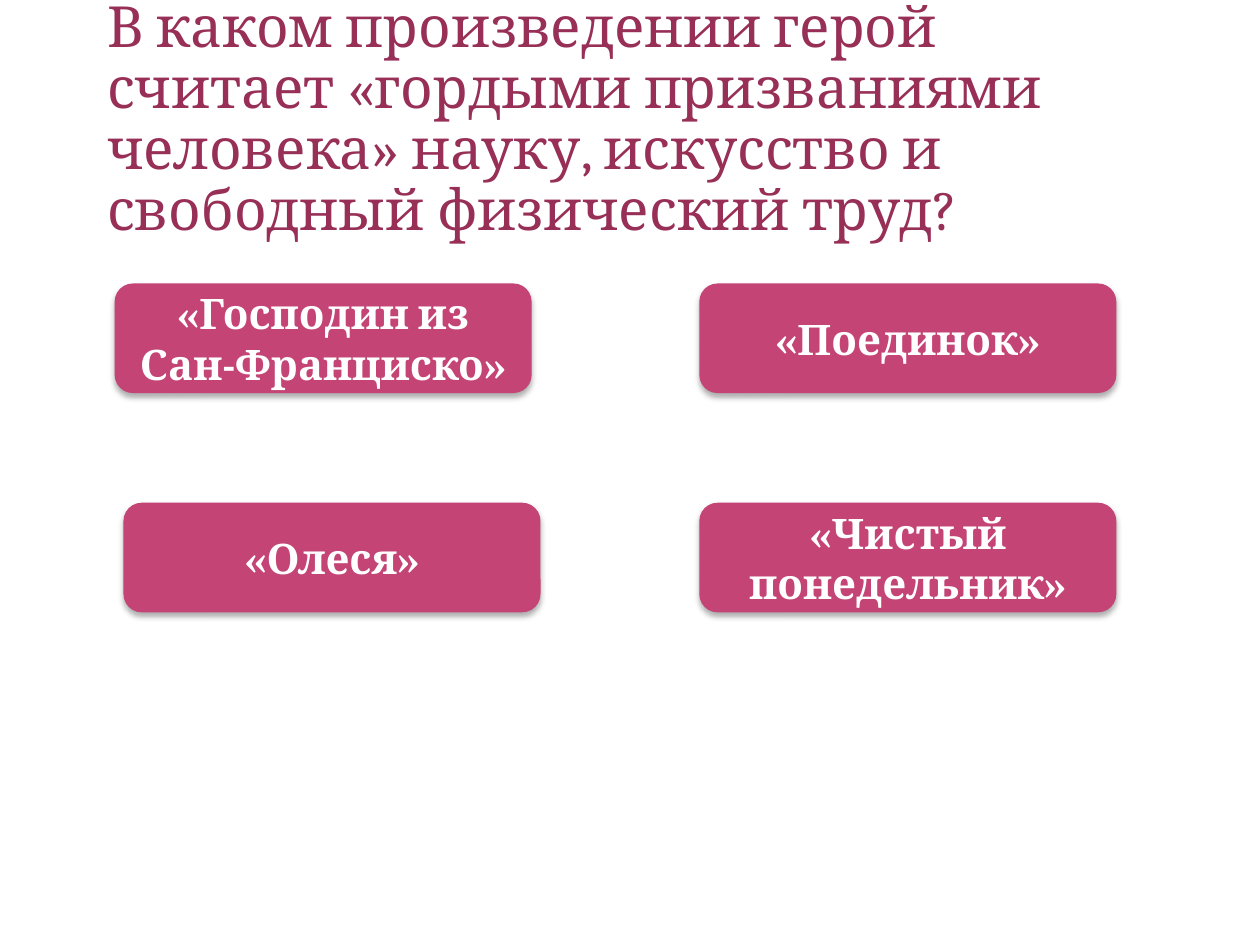
from pptx import Presentation
from pptx import util as u
from pptx.dml.color import RGBColor
from pptx.enum import shapes, text
from pptx.oxml import parse_xml
from pptx.oxml.ns import nsdecls

WIDTH, HEIGHT = 10, 7.5
QUESTION = ("В каком произведении герой считает «гордыми призваниями человека» "
            "науку, искусство и свободный физический труд?")
ROWS = (2.25, 3.99)
ANSWERS = (
    ("«Господин из Сан-Франциско»", 0.91, ROWS[0]),
    ("«Олеся»", 0.98, ROWS[1]),
    ("«Поединок»", 5.55, ROWS[0]),
    ("«Чистый понедельник»", 5.55, ROWS[1]),
)


def color(value):
    return RGBColor.from_string(value)


def write(frame, words, size, ink, bold=False, align=text.PP_ALIGN.LEFT,
          anchor=text.MSO_ANCHOR.MIDDLE, spacing=1.0, font="Cambria"):
    frame.word_wrap = True
    frame.auto_size = text.MSO_AUTO_SIZE.NONE
    frame.vertical_anchor = anchor
    para = frame.paragraphs[0]
    para.alignment = align
    para.line_spacing = spacing
    span = para.add_run()
    span.text = words
    span.font.name = font
    span.font.size = u.Pt(size)
    span.font.bold = bold
    span.font.color.rgb = color(ink)


class QuizSlide:
    """Builds a quiz question with answer buttons in one style."""

    accent, title_ink, button_ink = "C44475", "972F57", "FFFFFF"
    button_size = (3.31, 0.87)

    def __init__(self, deck):
        self.page = deck.slides.add_slide(deck.slide_layouts[5])

    def question(self, words, left, top, width, height):
        box = self.page.shapes.title
        box.left, box.top = u.Inches(left), u.Inches(top)
        box.width, box.height = u.Inches(width), u.Inches(height)
        write(box.text_frame, words, 32.4, self.title_ink,
              anchor=text.MSO_ANCHOR.BOTTOM, spacing=0.9)

    def answer(self, words, left, top):
        box = self.page.shapes.add_shape(
            shapes.MSO_SHAPE.ROUNDED_RECTANGLE,
            *map(u.Inches, (left, top, *self.button_size)))
        box.fill.solid()
        box.fill.fore_color.rgb = color(self.accent)
        box.line.fill.background()
        self.soft_shadow(box)
        write(box.text_frame, words, 24, self.button_ink, bold=True,
              align=text.PP_ALIGN.CENTER)

    def soft_shadow(self, box):
        box.shadow.inherit = False
        effects = box._element.spPr.find(
            "{http://schemas.openxmlformats.org/drawingml/2006/main}effectLst")
        effects.append(parse_xml(
            f'<a:outerShdw {nsdecls("a")} blurRad="{u.Pt(3.5)}" '
            f'dist="{u.Pt(2.2)}" dir="5400000" rotWithShape="0">'
            '<a:srgbClr val="000000"><a:alpha val="32000"/></a:srgbClr>'
            '</a:outerShdw>'))


def main():
    deck = Presentation()
    deck.slide_width, deck.slide_height = u.Inches(WIDTH), u.Inches(HEIGHT)
    quiz = QuizSlide(deck)
    quiz.question(QUESTION, 0.75, 0.68, 8.25, 1.3)
    for words, left, top in ANSWERS:
        quiz.answer(words, left, top)
    deck.save("out.pptx")


if __name__ == "__main__":
    main()
